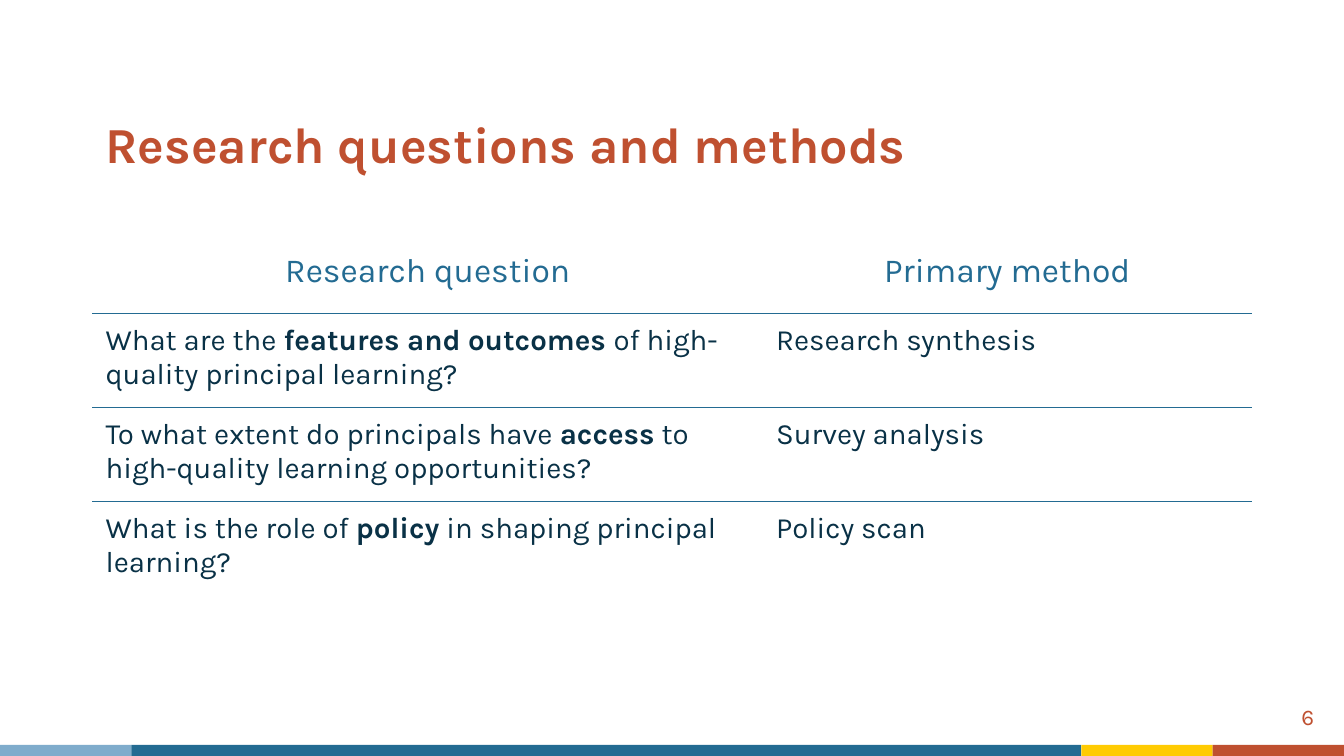
from lxml import etree
from pptx import Presentation
from pptx.dml.color import RGBColor
from pptx.enum.shapes import MSO_SHAPE
from pptx.enum.text import MSO_ANCHOR, PP_ALIGN
from pptx.oxml.ns import qn
from pptx.util import Cm, Pt

RECTANGLE = MSO_SHAPE.RECTANGLE
TOP, MIDDLE, BOTTOM = MSO_ANCHOR.TOP, MSO_ANCHOR.MIDDLE, MSO_ANCHOR.BOTTOM
LEFT, CENTER, RIGHT = PP_ALIGN.LEFT, PP_ALIGN.CENTER, PP_ALIGN.RIGHT

# Content: each question is (before, emphasis, after)
TITLE = "Research questions and methods"
PAGE_NUMBER = "6"
HEADERS = ["Research question", "Primary method"]
QUESTIONS = [
    (("What are the ", "features and outcomes ", "of high-quality principal learning?"),
     "Research synthesis"),
    (("To what extent do principals have ", "access", " to high-quality learning opportunities?"),
     "Survey analysis"),
    (("What is the role of ", "policy", " in shaping principal learning?"),
     "Policy scan"),
]


class Theme:
    font = "Karla"
    rust, blue, navy = "BF5030", "236B92", "093146"
    sky, yellow = "7FACCC", "FFCB02"
    title_size, header_size, body_size, number_size = 36, 24, 21, 16
    header_rule, row_rule = 1, 0.25


# Layout in centimetres
SLIDE_WIDTH, SLIDE_HEIGHT = 33.87, 19.05
MARGIN = 2.33
STRIP_HEIGHT = 0.28
STRIP = [(3.31, Theme.sky), (23.94, Theme.blue), (3.31, Theme.yellow), (3.31, Theme.rust)]
TABLE_TOP = 5.79
COLUMN_WIDTHS = [16.9, 12.31]
HEADER_HEIGHT, ROW_HEIGHT = 2.11, 2.37
INSET, CELL_INSET = 0.33, 0.25


def write(frame, runs, size, color, align=LEFT, bold=False):
    """Write runs in one paragraph; every second run is emphasised."""
    paragraph = frame.paragraphs[0]
    paragraph.alignment = align
    font = paragraph.font
    font.name, font.size, font.bold = Theme.font, Pt(size), bold
    font.color.rgb = RGBColor.from_string(color)
    for index, text in enumerate(runs):
        run = paragraph.add_run()
        run.text = text
        run.font.bold = bold or index % 2 == 1


def add_text(slide, box, text, size, color, align=LEFT, anchor=TOP, bold=False):
    frame = slide.shapes.add_textbox(*map(Cm, box)).text_frame
    frame.word_wrap = True
    frame.vertical_anchor = anchor
    frame.margin_left = frame.margin_right = Cm(INSET)
    frame.margin_top = frame.margin_bottom = Cm(INSET)
    write(frame, [text], size, color, align, bold)


def style_cell(cell, top_rule, bottom_rule):
    cell.margin_left = cell.margin_right = Cm(INSET)
    cell.margin_top = cell.margin_bottom = Cm(CELL_INSET)
    properties = cell._tc.get_or_add_tcPr()
    for side, width in (("L", 0), ("R", 0), ("T", top_rule), ("B", bottom_rule)):
        line = etree.SubElement(properties, qn(f"a:ln{side}"), w=str(Pt(width)))
        if width:
            fill = etree.SubElement(line, qn("a:solidFill"))
            etree.SubElement(fill, qn("a:srgbClr"), val=Theme.blue)
        else:
            etree.SubElement(line, qn("a:noFill"))
    cell.fill.background()


def add_strip(slide):
    left = 0
    for width, color in STRIP:
        shape = slide.shapes.add_shape(
            RECTANGLE, Cm(left), Cm(SLIDE_HEIGHT - STRIP_HEIGHT), Cm(width), Cm(STRIP_HEIGHT))
        shape.shadow.inherit = False
        shape.fill.solid()
        shape.fill.fore_color.rgb = RGBColor.from_string(color)
        shape.line.fill.background()
        left += width


def add_question_table(slide):
    row_heights = [HEADER_HEIGHT] + [ROW_HEIGHT] * len(QUESTIONS)
    table = slide.shapes.add_table(
        len(row_heights), len(COLUMN_WIDTHS), Cm(MARGIN), Cm(TABLE_TOP),
        Cm(sum(COLUMN_WIDTHS)), Cm(sum(row_heights))).table
    table.horz_banding = False
    for column, width in zip(table.columns, COLUMN_WIDTHS):
        column.width = Cm(width)
    for row, height in zip(table.rows, row_heights):
        row.height = Cm(height)

    # Rules above and below each row
    inner_rules = [Theme.row_rule] * (len(QUESTIONS) - 1)
    rules = [0, Theme.header_rule, *inner_rules, 0]
    for row, top_rule, bottom_rule in zip(table.rows, rules, rules[1:]):
        for cell in row.cells:
            style_cell(cell, top_rule, bottom_rule)

    for column, header in enumerate(HEADERS):
        cell = table.cell(0, column)
        cell.vertical_anchor = MIDDLE
        write(cell.text_frame, [header], Theme.header_size, Theme.blue, CENTER)
    for row, (question, method) in enumerate(QUESTIONS, start=1):
        for column, runs in enumerate((question, [method])):
            write(table.cell(row, column).text_frame, runs, Theme.body_size, Theme.navy)


def main():
    presentation = Presentation()
    presentation.slide_width, presentation.slide_height = Cm(SLIDE_WIDTH), Cm(SLIDE_HEIGHT)
    slide = presentation.slides.add_slide(presentation.slide_layouts[6])

    add_strip(slide)
    add_text(slide, (31.42, 17.4, 2.03, 1.17), PAGE_NUMBER,
             Theme.number_size, Theme.rust, align=RIGHT)
    add_text(slide, (MARGIN, 2.21, sum(COLUMN_WIDTHS), 2.49), TITLE,
             Theme.title_size, Theme.rust, anchor=BOTTOM, bold=True)
    add_question_table(slide)

    presentation.save("out.pptx")


if __name__ == "__main__":
    main()
